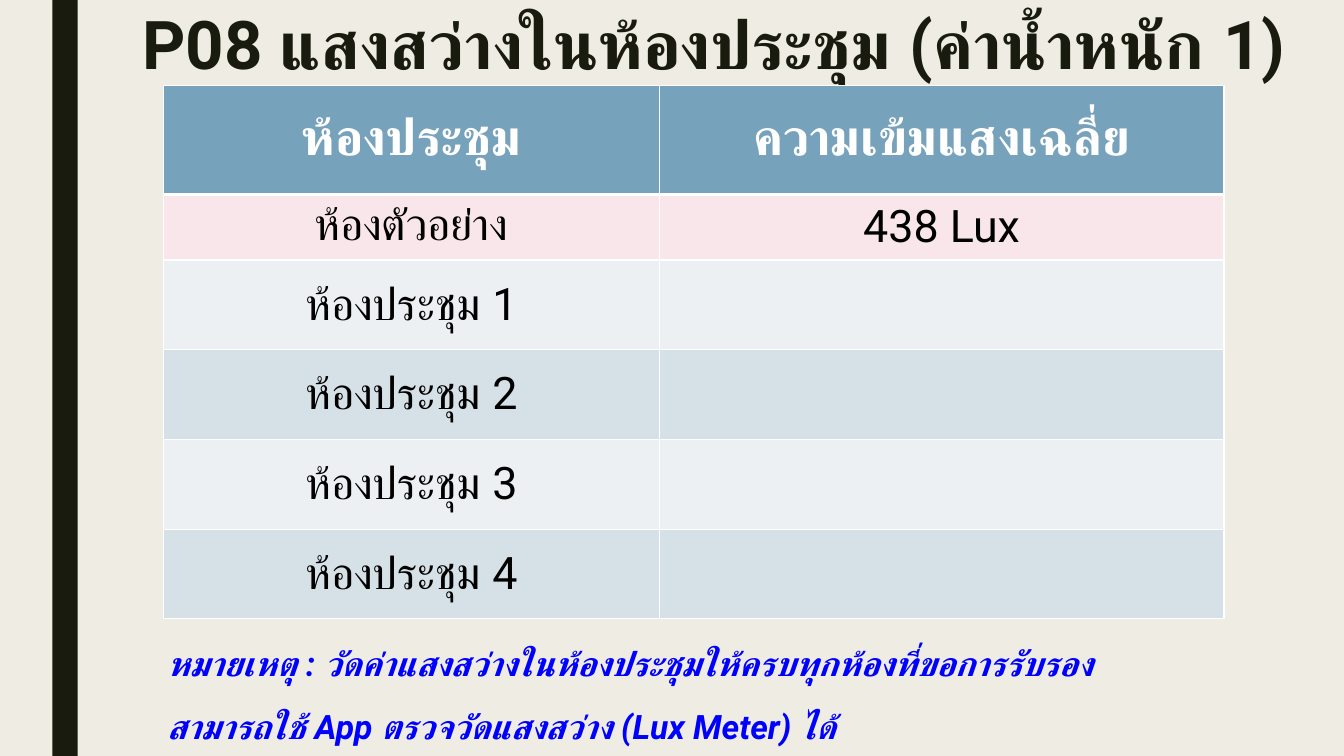
from lxml import etree
from pptx import Presentation
from pptx.dml.color import RGBColor
from pptx.enum.shapes import MSO_SHAPE
from pptx.enum.text import MSO_ANCHOR, PP_ALIGN
from pptx.oxml.ns import qn
from pptx.util import Inches, Pt

RECT = MSO_SHAPE.RECTANGLE
MIDDLE, TOP = MSO_ANCHOR.MIDDLE, MSO_ANCHOR.TOP
CENTER, LEFT = PP_ALIGN.CENTER, PP_ALIGN.LEFT

FONT = "Roboto"
COLORS = {
    "background": "EFEDE3", "dark": "191B0E", "note": "0000FF",
    "header": "77A2BB", "example": "F9E6EA", "light": "ECF0F3",
    "band": "D6E0E7", "white": "FFFFFF", "black": "000000",
}
COLUMNS = [4.92, 5.6]
HEADER_H, EXAMPLE_H, ROOM_H = 1.08, 0.65, 0.89
ROOMS = 4

TITLE = "P08 แสงสว่างในห้องประชุม (ค่าน้ำหนัก 1)"
HEADER = ("ห้องประชุม", "ความเข้มแสงเฉลี่ย")
EXAMPLE = ("ห้องตัวอย่าง", "438 Lux")
NOTES = [
    "หมายเหตุ : วัดค่าแสงสว่างในห้องประชุมให้ครบทุกห้องที่ขอการรับรอง",
    "สามารถใช้ App ตรวจวัดแสงสว่าง (Lux Meter) ได้",
]


def rgb(name):
    return RGBColor.from_string(COLORS[name])


def write(p, text, size, color, align=CENTER, bold=False, italic=False):
    p.text = text
    p.alignment = align
    font = p.font
    font.name, font.size, font.bold, font.italic = FONT, Pt(size), bold, italic
    font.color.rgb = rgb(color)


def add_bar(s, left, top, width, height):
    sp = s.shapes.add_shape(RECT, *map(Inches, (left, top, width, height)))
    sp.shadow.inherit = False
    sp.fill.solid()
    sp.fill.fore_color.rgb = rgb("dark")
    sp.line.fill.background()


def add_text(s, box, lines, size, color, anchor, spacing, before=0, after=0, **style):
    sp = s.shapes.add_textbox(*map(Inches, box))
    tf = sp.text_frame
    tf.word_wrap = True
    tf.vertical_anchor = anchor
    for i, line in enumerate(lines):
        p = tf.add_paragraph() if i else tf.paragraphs[0]
        write(p, line, size, color, **style)
        p.line_spacing = spacing
        p.space_before, p.space_after = Pt(before), Pt(after)


def set_borders(cell, bottom):
    """Borders precede the fill in the cell properties."""
    tcPr = cell._tc.get_or_add_tcPr()
    widths = {"lnL": 1, "lnR": 1, "lnT": 1, "lnB": bottom}
    for i, (tag, width) in enumerate(widths.items()):
        ln = etree.Element(qn("a:" + tag), w=str(Pt(width)))
        fill = etree.SubElement(ln, qn("a:solidFill"))
        etree.SubElement(fill, qn("a:srgbClr"), val=COLORS["white"])
        tcPr.insert(i, ln)


def add_light_table(s, left, top):
    rows = [(HEADER_H, "header", HEADER), (EXAMPLE_H, "example", EXAMPLE)]
    for n in range(1, ROOMS + 1):
        rows.append((ROOM_H, "light" if n % 2 else "band", (f"ห้องประชุม {n}", "")))
    height = sum(row[0] for row in rows)
    table = s.shapes.add_table(len(rows), len(COLUMNS), Inches(left), Inches(top),
                               Inches(sum(COLUMNS)), Inches(height)).table
    for column, width in zip(table.columns, COLUMNS):
        column.width = Inches(width)
    for r, (row_h, fill, texts) in enumerate(rows):
        table.rows[r].height = Inches(row_h)
        is_header = r == 0
        for c, text in enumerate(texts):
            cell = table.cell(r, c)
            cell.vertical_anchor = MIDDLE
            cell.fill.solid()
            cell.fill.fore_color.rgb = rgb(fill)
            # The example row's top edge carries on the thick header rule
            set_borders(cell, 3 if is_header else 1)
            if text:
                write(cell.text_frame.paragraphs[0], text, 36 if is_header else 32,
                      "white" if is_header else "black", bold=is_header)


def main():
    prs = Presentation()
    prs.slide_width, prs.slide_height = Inches(13.33), Inches(7.5)
    s = prs.slides.add_slide(prs.slide_layouts[6])
    s.background.fill.solid()
    s.background.fill.fore_color.rgb = rgb("background")

    # Side bar and title
    add_bar(s, 0.52, 0, 0.25, 7.5)
    add_text(s, (0.83, 0.03, 12.5, 0.9), [TITLE], 48, "dark", MIDDLE, 0.89, bold=True)

    # Notes under the table
    add_text(s, (1.56, 6.27, 12.5, 1.07), NOTES, 24, "note", TOP, 1.15,
             before=10, after=2, align=LEFT, bold=True, italic=True)

    # Light readings by room
    add_light_table(s, 1.62, 0.85)
    prs.save("out.pptx")


if __name__ == "__main__":
    main()
